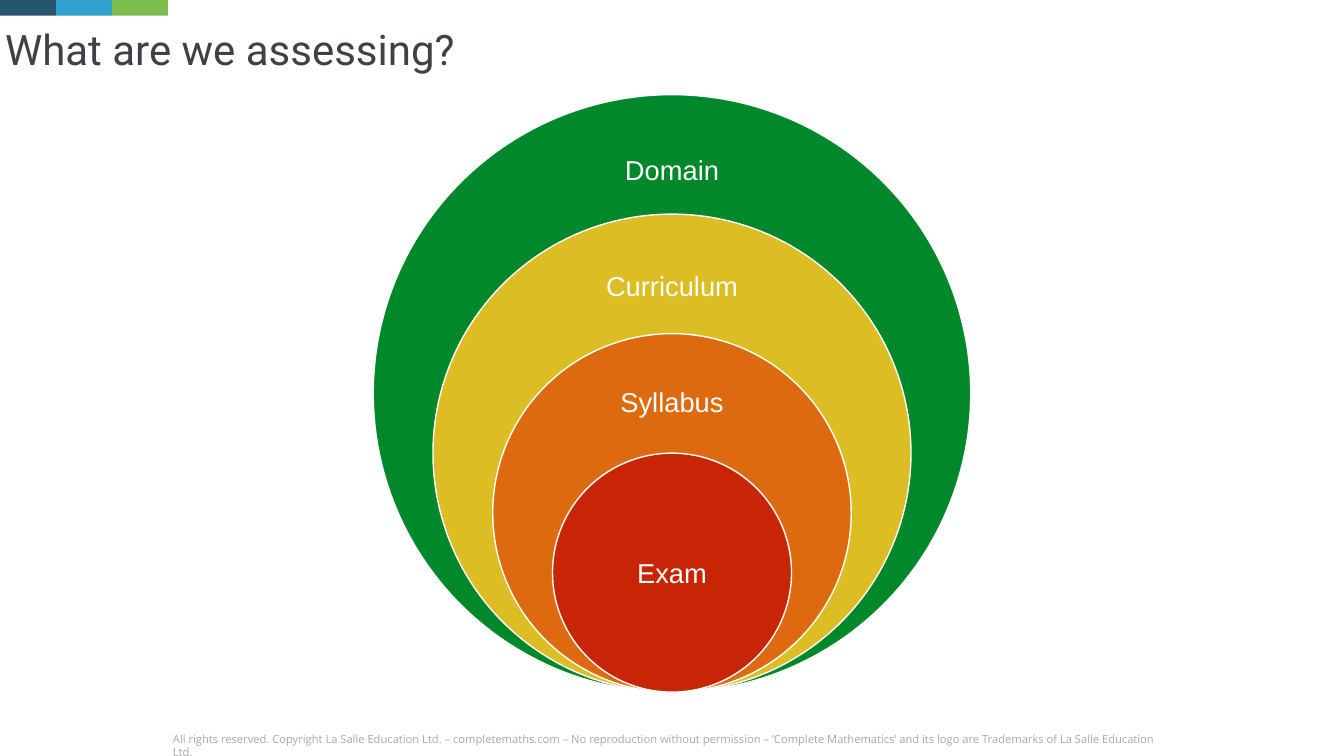
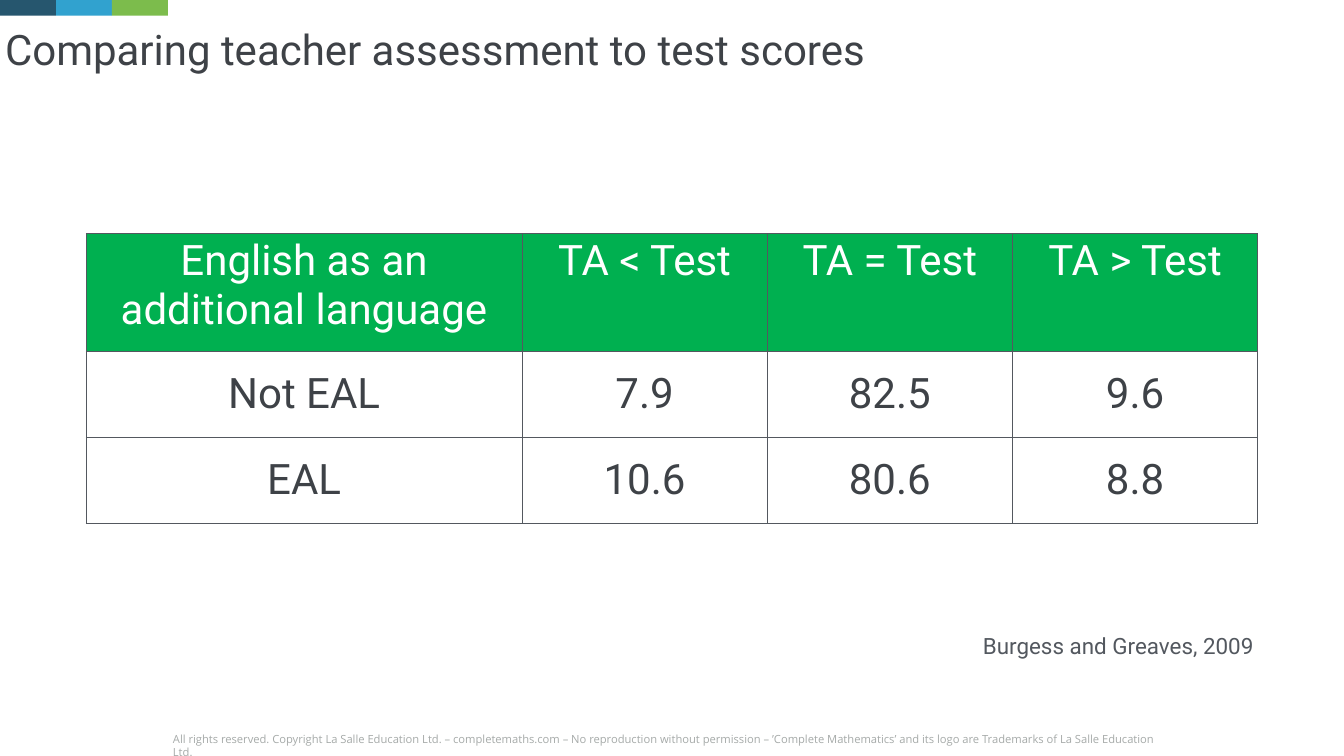
from lxml import etree
from pptx import Presentation
from pptx import util as u
from pptx.dml.color import RGBColor
from pptx.enum import shapes, text
from pptx.oxml import ns

# Shared style: a grid of 24 columns by 13.5 rows
COLS, ROWS = 24, 13.5
WIDE, HIGH = u.Inches(26.67), u.Inches(15)
HUES = {
    "navy": "26566E", "sky": "31A2CF", "leaf": "7CBC4C",
    "ink": "3E4247", "slate": "53585F", "mist": "A6AAA9", "white": "FFFFFF",
    "green": "00882B", "gold": "DCBD23", "amber": "DE6A10", "red": "C82506",
    "head": "00B050",
}
FONTS = {
    "title": {"name": "Roboto", "size": u.Pt(60), "bold": False},
    "label": {"name": "Arial", "size": u.Pt(39)},
    "cite": {"name": "Roboto", "size": u.Pt(32)},
    "foot": {"name": "Open Sans", "size": u.Pt(16)},
}
LEFT, MID, RIGHT = (text.PP_ALIGN.LEFT, text.PP_ALIGN.CENTER,
                    text.PP_ALIGN.RIGHT)
TOP, CENTRE = text.MSO_ANCHOR.TOP, text.MSO_ANCHOR.MIDDLE
FOOT = ("All rights reserved. Copyright La Salle Education Ltd. – "
        "completemaths.com – No reproduction without permission – "
        "’Complete Mathematics’ and its logo are Trademarks of "
        "La Salle Education Ltd.")


def rgb(hue):
    return RGBColor.from_string(HUES[hue])


def apply(item, vals):
    for key, val in vals.items():
        setattr(item, key, val)


class Deck:
    def __init__(self):
        self.prs = Presentation()
        apply(self.prs, {"slide_width": WIDE, "slide_height": HIGH})
        self.slide = None

    def box(self, col, row, wide, high):
        """Turn grid units into slide lengths."""
        return (int(col * WIDE / COLS), int(row * HIGH / ROWS),
                int(wide * WIDE / COLS), int(high * HIGH / ROWS))

    def words(self, para, copy, font, hue, align):
        para.text = copy
        para.alignment = align
        apply(para.font, FONTS[font])
        para.font.color.rgb = rgb(hue)

    def page(self, title, wide):
        """Start a slide with its title, top band and footer."""
        self.slide = self.prs.slides.add_slide(self.prs.slide_layouts[5])
        head = self.slide.shapes.title
        spot = self.box(0, 0.28, wide, 1.18)
        apply(head, dict(zip(("left", "top", "width", "height"), spot)))
        apply(head.text_frame, {"auto_size": text.MSO_AUTO_SIZE.NONE,
                                "vertical_anchor": CENTRE, "word_wrap": True})
        self.words(head.text_frame.paragraphs[0], title, "title", "ink", LEFT)
        for col, hue in enumerate(("navy", "sky", "leaf")):
            self.shape("RECTANGLE", (col, 0, 1, 0.28), hue)
        self.label(FOOT, (3, 12.98, 18, 0.46), "foot", "mist", LEFT, TOP, 0.1)

    def shape(self, kind, area, hue, edge=None):
        item = self.slide.shapes.add_shape(
            getattr(shapes.MSO_SHAPE, kind), *self.box(*area))
        item.shadow.inherit = False
        item.fill.solid()
        item.fill.fore_color.rgb = rgb(hue)
        if edge:
            item.line.color.rgb = rgb(edge)
            item.line.width = u.Pt(2)
        else:
            item.line.fill.background()

    def label(self, copy, area, font, hue, align=MID, anchor=CENTRE,
              pad=0.3, wrap=True):
        frame = self.slide.shapes.add_textbox(*self.box(*area)).text_frame
        apply(frame, {"word_wrap": wrap, "vertical_anchor": anchor})
        apply(frame, {"margin_" + side: u.Inches(pad)
                      for side in ("left", "right", "top", "bottom")})
        self.words(frame.paragraphs[0], copy, font, hue, align)

    def table(self, data, left, top, wides, highs):
        area = self.box(left, top, sum(wides), sum(highs))
        grid = self.slide.shapes.add_table(
            len(data), len(wides), *area).table
        apply(grid, {"first_row": False, "horz_banding": False})
        for col, wide in zip(grid.columns, wides):
            col.width = self.box(0, 0, wide, 0)[2]
        for num, (row, high) in enumerate(zip(grid.rows, highs)):
            row.height = self.box(0, 0, 0, high)[3]
            for cell, copy in zip(row.cells, data[num]):
                self.cell(cell, copy, num == 0)

    def cell(self, cell, copy, head):
        cell.vertical_anchor = TOP if head else CENTRE
        self.words(cell.text_frame.paragraphs[0], copy, "title",
                   "white" if head else "ink", MID)
        # Borders come before the fill in the cell's properties
        props = cell._tc.get_or_add_tcPr()
        for side in ("lnL", "lnR", "lnT", "lnB"):
            line = etree.SubElement(props, ns.qn("a:" + side),
                                    w=str(u.Pt(1)))
            fill = etree.SubElement(line, ns.qn("a:solidFill"))
            etree.SubElement(fill, ns.qn("a:srgbClr"), val=HUES["slate"])
        if head:
            cell.fill.solid()
            cell.fill.fore_color.rgb = rgb("head")
        else:
            cell.fill.background()


def rings(deck):
    """Nested circles that share their lowest point."""
    deck.page("What are we assessing?", 10.35)
    size, base, mid, wide = 10.67, 12.36, COLS / 2, 2.98
    # Name, hue, share of the largest circle, label top and height in circle
    parts = (("Domain", "green", 1, 0.05, 0.15),
             ("Curriculum", "gold", 0.8, 0.06, 0.18),
             ("Syllabus", "amber", 0.6, 0.08, 0.22),
             ("Exam", "red", 0.4, 0.25, 0.5))
    for name, hue, share, drop, high in parts:
        span = size * share
        top = base - span
        deck.shape("OVAL", (mid - span / 2, top, span, span), hue, "white")
        deck.label(name, (mid - wide / 2, top + drop * span, wide,
                          high * span), "label", "white")


def scores(deck):
    """Table of teacher assessment (TA) against test, with its source."""
    deck.page("Comparing teacher assessment to test scores", 16.4)
    data = (("English as an additional language",
             "TA < Test", "TA = Test", "TA > Test"),
            ("Not EAL", "7.9", "82.5", "9.6"),
            ("EAL", "10.6", "80.6", "8.8"))
    deck.table(data, 1.54, 4.17, (7.78,) + (4.38,) * 3, (2.1, 1.54, 1.54))
    deck.label("Burgess and Greaves, 2009", (17.3, 11.22, 5.16, 0.63),
               "cite", "slate", RIGHT, pad=0.08, wrap=False)


def main():
    deck = Deck()
    rings(deck)
    scores(deck)
    deck.prs.save("out.pptx")


if __name__ == "__main__":
    main()
